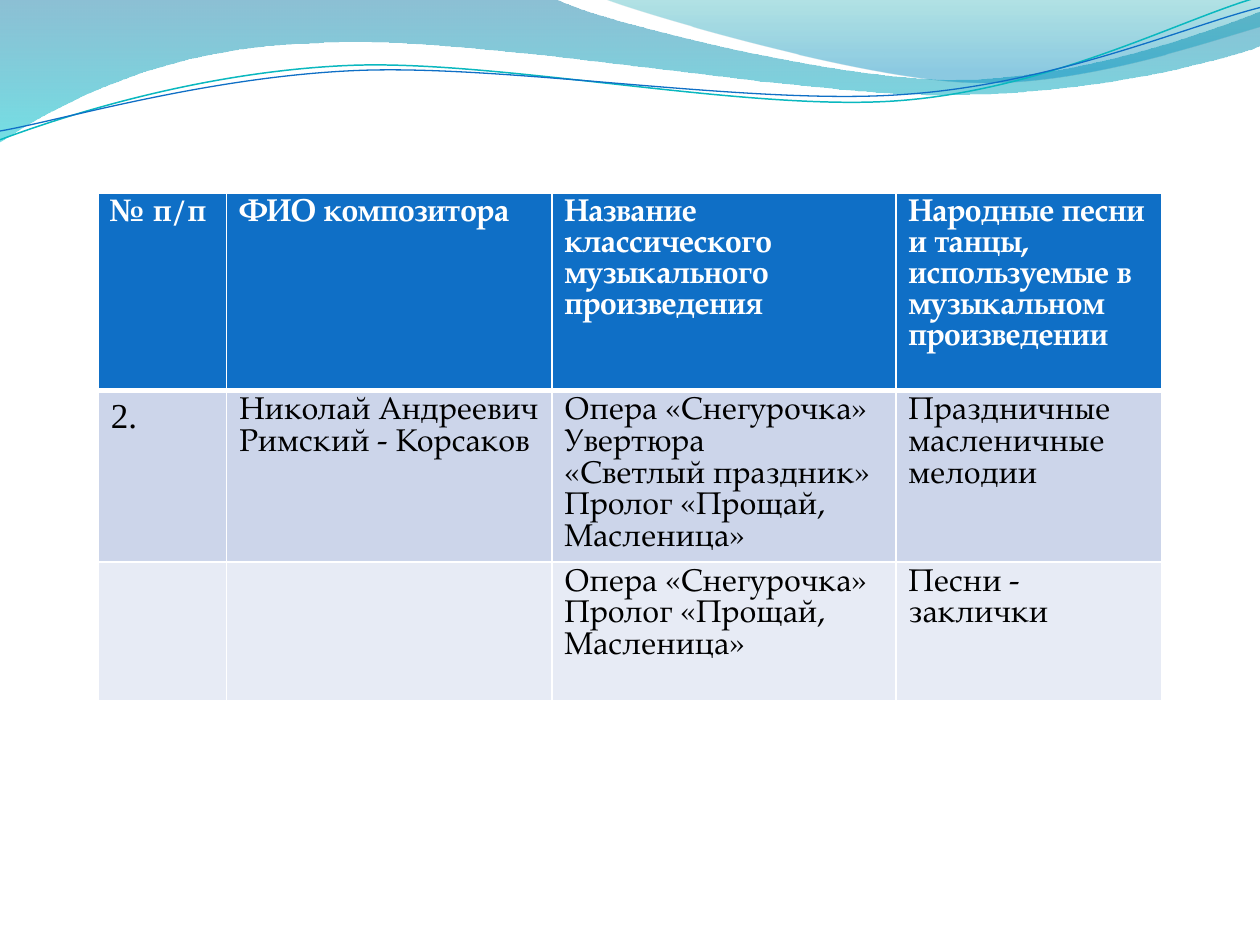
"""Builds a slide with a wave banner and a table of a composer's works."""
from dataclasses import dataclass

from lxml import etree
from pptx import Presentation
from pptx.dml.color import RGBColor
from pptx.oxml.ns import qn
from pptx.util import Inches, Pt

WHITE = RGBColor(0xFF, 0xFF, 0xFF)
BLACK = RGBColor(0x00, 0x00, 0x00)
HEADER_BLUE = RGBColor(0x0F, 0x6F, 0xC6)
BAND_DARK = RGBColor(0xCC, 0xD5, 0xEA)
BAND_LIGHT = RGBColor(0xE7, 0xEB, 0xF5)
DEEP_BLUE = RGBColor(0x00, 0x74, 0xA1)
AQUA = RGBColor(0x00, 0xC6, 0xCF)
TEAL = RGBColor(0x00, 0xA1, 0xA9)
SKY = RGBColor(0x00, 0x8B, 0xBF)
LINE_TEAL = RGBColor(0x0A, 0xB8, 0xBF)

BODY_FONT = "TeX Gyre Pagella"
NUMBER_FONT = "Times New Roman"
UNITS_PER_INCH = 100

Point = tuple[float, float]


@dataclass(frozen=True)
class Stop:
    position: float
    color: RGBColor
    opacity: int


@dataclass(frozen=True)
class Wave:
    """An outline whose segments hold one point (line) or three (Bézier curve)."""
    start: Point
    segments: list[tuple[Point, ...]]
    stops: tuple[Stop, ...] = ()
    line_color: RGBColor | None = None
    line_width: float = 0


@dataclass(frozen=True)
class Row:
    height: float
    fill: RGBColor
    color: RGBColor
    bold: bool
    bottom_border: float
    cells: list[list[str]]


WAVES = [
    Wave((0, 0), [
        ((4.4, -0.01),),
        ((4.76, 0.17), (6.64, 0.63), (7.58, 0.63)),
        ((8.53, 0.63), (9.58, 0.26), (10, 0.09)),
        ((10.01, 0.36),),
        ((9.83, 0.44), (8.7, 0.76), (7.46, 0.75)),
        ((6.22, 0.75), (3.82, 0.28), (2.57, 0.34)),
        ((1.29, 0.36), (0.46, 0.83), (-0.01, 1.13)),
        ((0, 0),),
    ], stops=(Stop(0, DEEP_BLUE, 45), Stop(1, AQUA, 55))),
    Wave((4.79, -0.01), [
        ((5.09, 0.11), (6.82, 0.62), (7.69, 0.65)),
        ((8.56, 0.69), (9.61, 0.32), (10, 0.21)),
        ((10, 0),),
        ((4.79, -0.01),),
    ], stops=(Stop(0, TEAL, 30), Stop(0.8, SKY, 45))),
    Wave((0, 1.11), [
        ((0.48, 0.93), (1.58, 0.57), (2.77, 0.52)),
        ((3.95, 0.47), (5.93, 0.89), (7.13, 0.8)),
        ((8.33, 0.71), (9.38, 0.15), (9.98, -0.02)),
    ], line_color=LINE_TEAL, line_width=0.85),
    Wave((0, 1.04), [
        ((0.47, 0.96), (1.64, 0.61), (2.83, 0.56)),
        ((4.03, 0.51), (5.97, 0.84), (7.17, 0.75)),
        ((8.36, 0.67), (9.41, 0.21), (10, 0.06)),
    ], line_color=HEADER_BLUE, line_width=0.75),
]

COLUMN_WIDTHS = [1.02, 2.58, 2.73, 2.11]
ROWS = [
    Row(1.57, HEADER_BLUE, WHITE, True, 3, [
        ["№ п/п"],
        ["ФИО композитора"],
        ["Название классического музыкального произведения"],
        ["Народные песни и танцы, используемые в музыкальном произведении"],
    ]),
    Row(1.36, BAND_DARK, BLACK, False, 1, [
        ["2."],
        ["Николай Андреевич Римский - Корсаков"],
        ["Опера «Снегурочка» Увертюра", "«Светлый праздник» Пролог «Прощай, Масленица»"],
        ["Праздничные масленичные мелодии"],
    ]),
    Row(1.1, BAND_LIGHT, BLACK, False, 1, [
        [],
        [],
        ["Опера «Снегурочка» Пролог «Прощай, Масленица»"],
        ["Песни - заклички"],
    ]),
]


def bend_segments(shape, segments: list[tuple[Point, ...]]) -> None:
    """Join the three line points of each curved segment into one Bézier curve."""
    lines = iter(list(shape._element.spPr.iter(qn("a:lnTo"))))
    for segment in segments:
        group = [next(lines) for _ in segment]
        if len(group) == 3:
            curve = etree.Element(qn("a:cubicBezTo"))
            group[0].addprevious(curve)
            for line in group:
                curve.append(line[0])
                line.getparent().remove(line)


def draw_wave(page, wave: Wave) -> None:
    """Draw a gradient-filled area or an open stroke."""
    start, *points = [
        (round(x * UNITS_PER_INCH), round(y * UNITS_PER_INCH))
        for x, y in [wave.start, *(point for segment in wave.segments for point in segment)]
    ]
    builder = page.shapes.build_freeform(*start, scale=Inches(1) / UNITS_PER_INCH)
    builder.add_line_segments(points, close=bool(wave.stops))
    shape = builder.convert_to_shape()
    bend_segments(shape, wave.segments)
    shape.shadow.inherit = False
    if wave.stops:
        shape.fill.gradient()
        shape.fill.gradient_angle = 270
        for target, stop in zip(shape.fill.gradient_stops, wave.stops):
            target.position = stop.position
            target.color.rgb = stop.color
        colors = shape._element.spPr.iter(qn("a:srgbClr"))
        for color, stop in zip(list(colors), wave.stops):
            etree.SubElement(color, qn("a:alpha"), val=str(stop.opacity * 1000))
        shape.line.fill.background()
    else:
        shape.fill.background()
        shape.line.color.rgb = wave.line_color
        shape.line.width = Pt(wave.line_width)


def add_borders(cell, top: float, bottom: float) -> None:
    """Put white borders before the fill of a cell."""
    properties = cell._tc.get_or_add_tcPr()
    widths = {"a:lnL": 1, "a:lnR": 1, "a:lnT": top, "a:lnB": bottom}
    for index, (tag, width) in enumerate(widths.items()):
        border = etree.Element(qn(tag), w=str(Pt(width)))
        fill = etree.SubElement(border, qn("a:solidFill"))
        etree.SubElement(fill, qn("a:srgbClr"), val=str(WHITE))
        properties.insert(index, border)


def write_cell(cell, texts: list[str], row: Row, font: str, size: int) -> None:
    """Fill a cell and write one paragraph per text."""
    cell.fill.solid()
    cell.fill.fore_color.rgb = row.fill
    for index, text in enumerate(texts):
        para = cell.text_frame.add_paragraph() if index else cell.text_frame.paragraphs[0]
        span = para.add_run()
        span.text = text
        span.font.name = font
        span.font.size = Pt(size)
        span.font.bold = row.bold
        span.font.color.rgb = row.color


def draw_table(page) -> None:
    """Draw the table of works."""
    frame = page.shapes.add_table(
        len(ROWS), len(COLUMN_WIDTHS), Inches(0.78), Inches(1.53),
        Inches(sum(COLUMN_WIDTHS)), Inches(sum(row.height for row in ROWS)))
    table = frame.table
    for column, width in zip(table.columns, COLUMN_WIDTHS):
        column.width = Inches(width)
    top_border = 1
    for r, row in enumerate(ROWS):
        table.rows[r].height = Inches(row.height)
        for c, texts in enumerate(row.cells):
            numbered = r > 0 and c == 0
            font, size = (NUMBER_FONT, 20) if numbered else (BODY_FONT, 18)
            write_cell(table.cell(r, c), texts, row, font, size)
            add_borders(table.cell(r, c), top_border, row.bottom_border)
        top_border = row.bottom_border


def main() -> None:
    """Build and save the deck."""
    deck = Presentation()
    deck.slide_width, deck.slide_height = Inches(10), Inches(7.5)
    page = deck.slides.add_slide(deck.slide_layouts[6])
    for wave in WAVES:
        draw_wave(page, wave)
    draw_table(page)
    deck.save("out.pptx")


if __name__ == "__main__":
    main()
